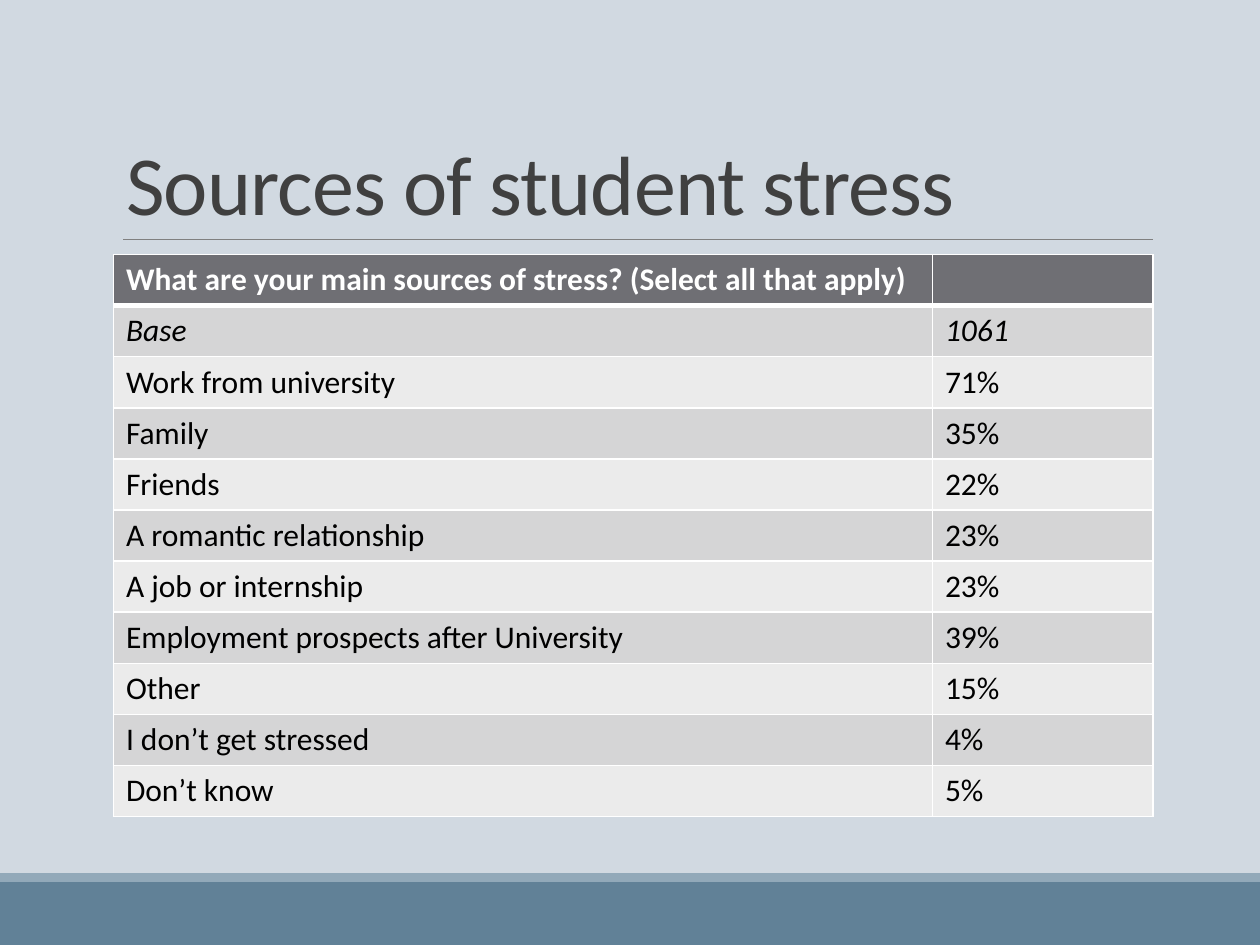
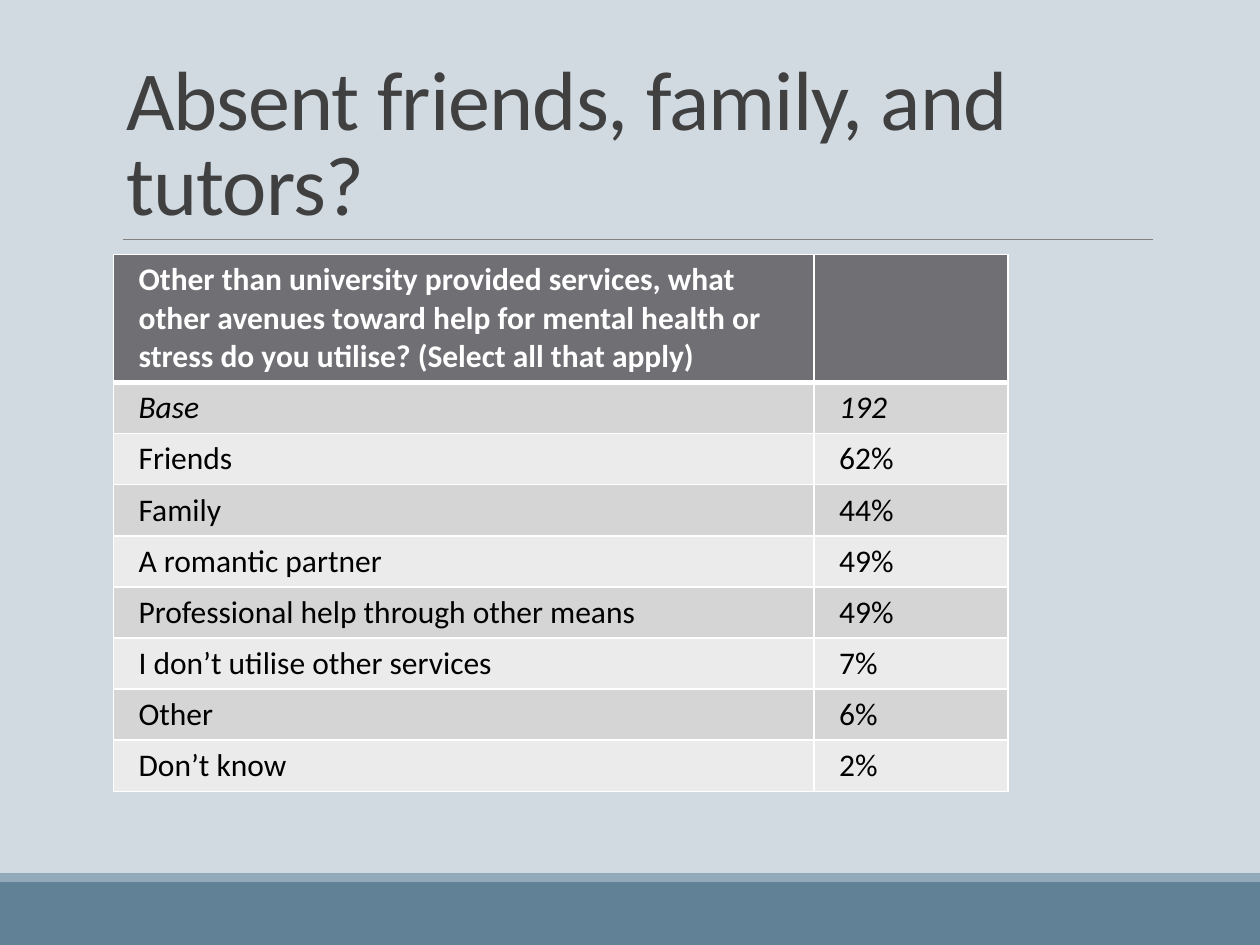
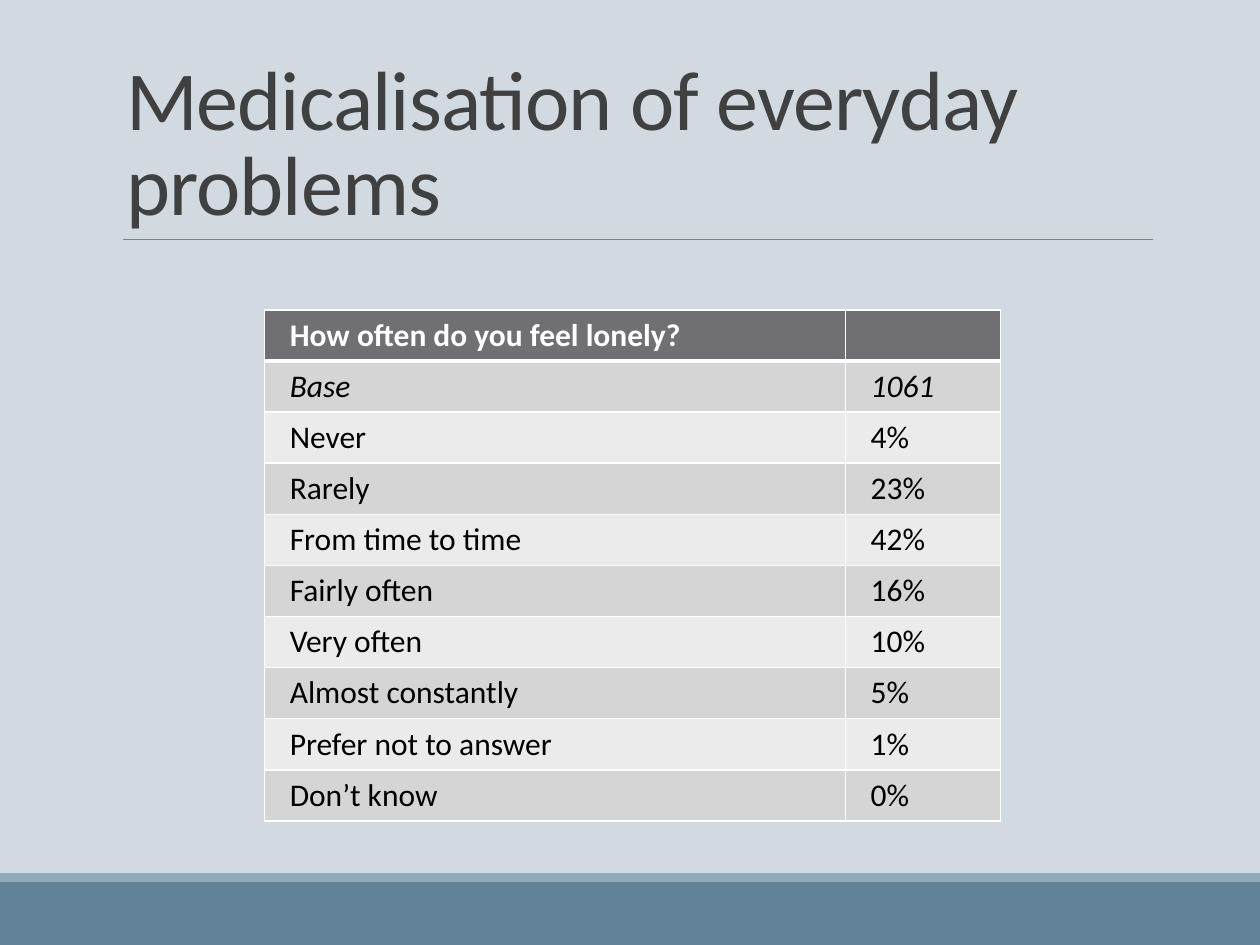
import pptx
import pptx.util
import pptx.dml.color
import pptx.enum.shapes
import pptx.enum.text
import pptx.oxml
import pptx.oxml.ns

RGB = pptx.dml.color.RGBColor
SKY = RGB(0xD1, 0xD9, 0xE1)
STEEL = RGB(0x61, 0x81, 0x97)
MIST = RGB(0x92, 0xA9, 0xB9)
RULE = RGB(0x80, 0x80, 0x80)
INK = RGB(0x40, 0x40, 0x40)
HEAD = RGB(0x6F, 0x6F, 0x74)
DARK = RGB(0xD5, 0xD5, 0xD6)
PALE = RGB(0xEB, 0xEB, 0xEB)
WHITE = RGB(0xFF, 0xFF, 0xFF)
BLACK = RGB(0, 0, 0)

FONT = "Calibri"
WIDE, HIGH = pptx.util.Inches(10), pptx.util.Inches(7.5)
UNIT = WIDE // 100  # the slide is a grid of 100 columns by 75 rows
ROW = pptx.util.Pt(29.2)
TITLE = (9, 3.1, 82.5, 15.9)


def grid(*vals):
    """Turn grid counts into lengths."""
    return [round(val * UNIT) for val in vals]


def write(frame, text, size=18, color=BLACK, bold=False, slant=False,
          lead=None, track=None):
    """Put one formatted paragraph in a text frame."""
    para = frame.paragraphs[0]
    if lead:
        para.line_spacing = lead
    run = para.add_run()
    run.text = text
    font = run.font
    font.name, font.size = FONT, pptx.util.Pt(size)
    font.bold, font.italic = bold, slant
    font.color.rgb = color
    if track:
        run._r.get_or_add_rPr().set("spc", str(track))


def band(slide, box, color):
    """Draw a plain bar."""
    bar = slide.shapes.add_shape(
        pptx.enum.shapes.MSO_SHAPE.RECTANGLE, *grid(*box))
    bar.shadow.inherit = False
    bar.fill.solid()
    bar.fill.fore_color.rgb = color
    bar.line.fill.background()


def base(slide):
    """Draw the ground, foot bands and title rule."""
    fill = slide.background.fill
    fill.solid()
    fill.fore_color.rgb = SKY
    band(slide, (0, 70, 100, 5), STEEL)
    band(slide, (0, 69.3, 100, 0.7), MIST)
    line = slide.shapes.add_connector(
        pptx.enum.shapes.MSO_CONNECTOR.STRAIGHT, *grid(9.8, 19, 91.5, 19))
    line.line.color.rgb = RULE
    line.line.width = pptx.util.Pt(0.5)
    pptx.oxml.ns.qn("a:effectLst")
    line._element.spPr.append(
        pptx.oxml.parse_xml(f'<a:effectLst {pptx.oxml.ns.nsdecls("a")}/>'))


def head(slide, text, box=TITLE):
    """Place the slide title."""
    shape = slide.shapes.title
    shape.left, shape.top, shape.width, shape.height = grid(*box)
    frame = shape.text_frame
    frame.word_wrap = True
    frame.auto_size = pptx.enum.text.MSO_AUTO_SIZE.NONE
    frame.vertical_anchor = pptx.enum.text.MSO_ANCHOR.BOTTOM
    frame.paragraphs[0].alignment = pptx.enum.text.PP_ALIGN.LEFT
    write(frame, text, size=48, color=INK, lead=0.85, track=-50)


def edge(cell, top=1, foot=1):
    """Give a cell white borders, widths in points."""
    props = cell._tc.get_or_add_tcPr()
    for side, width in zip("LRTB", (1, 1, top, foot)):
        props.append(pptx.oxml.parse_xml(
            f'<a:ln{side} {pptx.oxml.ns.nsdecls("a")} '
            f'w="{pptx.util.Pt(width)}"><a:solidFill>'
            f'<a:srgbClr val="{WHITE}"/></a:solidFill></a:ln{side}>'))


def poll(slide, spot, cols, pad, ask, rows):
    """Draw a survey table: question, base count, then answers."""
    rows = [(ask, "")] + rows
    left, top, width = grid(*spot, sum(cols))
    table = slide.shapes.add_table(
        len(rows), len(cols), left, top, width, ROW * len(rows)).table
    for col, span in zip(table.columns, grid(*cols)):
        col.width = span
    for r, row in enumerate(rows):
        table.rows[r].height = ROW
        for c, text in enumerate(row):
            cell = table.cell(r, c)
            cell.margin_left = cell.margin_right = grid(pad)[0]
            # A thick line parts the question from the answers
            edge(cell, top=3 if r == 1 else 1, foot=3 if r == 0 else 1)
            cell.fill.solid()
            cell.fill.fore_color.rgb = (
                HEAD if r == 0 else DARK if r % 2 else PALE)
            if text:
                write(cell.text_frame, text, color=BLACK if r else WHITE,
                      bold=r == 0, slant=r == 1)


# Title, table corner, column widths, cell padding, question, rows
PAGES = [
    ("Sources of student stress", (9, 20.2), (65, 17.5), 1,
     "What are your main sources of stress? (Select all that apply)",
     [("Base", "1061"), ("Work from university", "71%"), ("Family", "35%"),
      ("Friends", "22%"), ("A romantic relationship", "23%"),
      ("A job or internship", "23%"),
      ("Employment prospects after University", "39%"), ("Other", "15%"),
      ("I don’t get stressed", "4%"), ("Don’t know", "5%")]),
    ("Absent friends, family, and tutors?", (9, 20.2), (55.6, 15.4), 2,
     "Other than university provided services, what other avenues toward "
     "help for mental health or stress do you utilise? "
     "(Select all that apply)",
     [("Base", "192"), ("Friends", "62%"), ("Family", "44%"),
      ("A romantic partner", "49%"),
      ("Professional help through other means", "49%"),
      ("I don’t utilise other services", "7%"), ("Other", "6%"),
      ("Don’t know", "2%")]),
    ("Medicalisation of everyday problems", (21, 24.6), (46.1, 12.3), 2,
     "How often do you feel lonely?",
     [("Base", "1061"), ("Never", "4%"), ("Rarely", "23%"),
      ("From time to time", "42%"), ("Fairly often", "16%"),
      ("Very often", "10%"), ("Almost constantly", "5%"),
      ("Prefer not to answer", "1%"), ("Don’t know", "0%")]),
]


def main():
    deck = pptx.Presentation()
    deck.slide_width, deck.slide_height = WIDE, HIGH
    for title, *parts in PAGES:
        slide = deck.slides.add_slide(deck.slide_layouts[5])
        base(slide)
        head(slide, title)
        poll(slide, *parts)
    deck.save("out.pptx")


if __name__ == "__main__":
    main()
